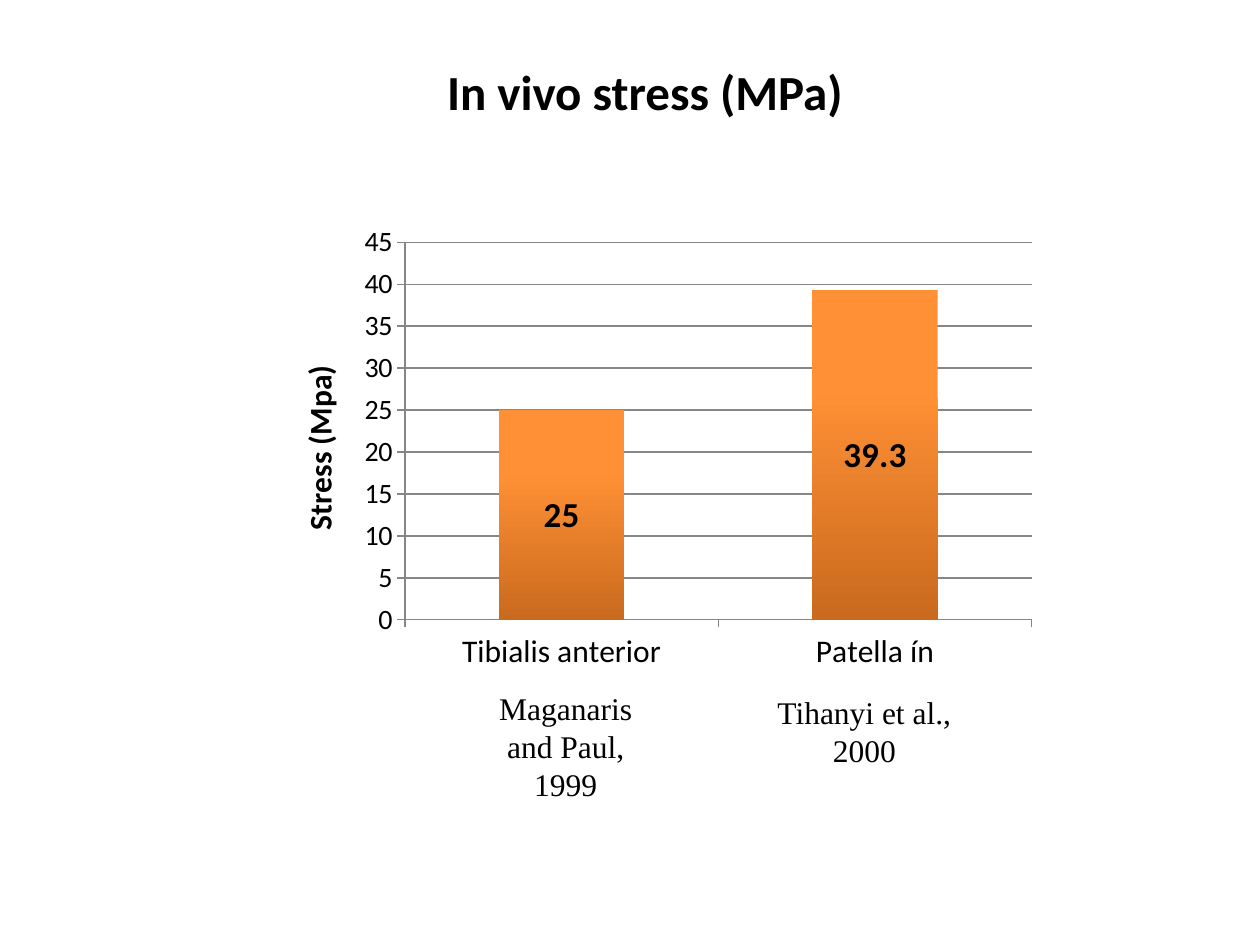
from lxml.etree import SubElement
from pptx import Presentation
from pptx.chart.data import CategoryChartData
from pptx.dml.color import RGBColor
from pptx.enum.chart import XL_CHART_TYPE as ChartType, XL_LABEL_POSITION as LabelPosition
from pptx.enum.chart import XL_TICK_MARK as TickMark
from pptx.enum.text import MSO_ANCHOR as Anchor, PP_ALIGN as Align
from pptx.oxml.ns import qn
from pptx.util import Cm, Pt

COLORS = {"text": "000000", "axis": "868686", "bar_top": "FF9035", "bar_bottom": "C96A1E"}
HEADING_FONT, CITATION_FONT = "Calibri", "Times New Roman"


def color(name):
    return RGBColor.from_string(COLORS[name])


def set_font(font, size, name=HEADING_FONT, bold=False):
    font.size, font.name, font.bold = Pt(size), name, bold
    font.color.rgb = color("text")


def write_centered(shape, text, size, name, bold=False):
    frame = shape.text_frame
    frame.word_wrap = True
    frame.vertical_anchor = Anchor.TOP
    paragraph = frame.paragraphs[0]
    paragraph.alignment = Align.CENTER
    run = paragraph.add_run()
    run.text = text
    set_font(run.font, size, name, bold)


def place_title(slide, box):
    title = slide.shapes.title
    title.left, title.top, title.width, title.height = box
    write_centered(title, "In vivo stress (MPa)", 28, HEADING_FONT, True)


def set_plot_area(chart, **fractions):
    plot_area = chart.plots[0]._element.getparent()
    layout = plot_area.find(qn("c:layout"))
    if layout is None:
        layout = SubElement(plot_area, qn("c:layout"))
        plot_area.insert(0, layout)
    manual = SubElement(layout, qn("c:manualLayout"))
    settings = {"layoutTarget": "inner", "xMode": "edge", "yMode": "edge", **fractions}
    for tag, value in settings.items():
        SubElement(manual, qn(f"c:{tag}")).set("val", str(value))


def style_axis(axis, size):
    axis.major_tick_mark = TickMark.OUTSIDE
    axis.minor_tick_mark = TickMark.NONE
    axis.format.line.color.rgb = color("axis")
    set_font(axis.tick_labels.font, size)


def add_stress_chart(slide, box):
    data = CategoryChartData()
    data.categories = ["Tibialis anterior", "Patella ín"]
    data.add_series("Series 1", [25, 39.3])
    chart = slide.shapes.add_chart(ChartType.COLUMN_CLUSTERED, *box, data).chart
    set_font(chart.font, 10)
    chart.has_legend = False
    chart.has_title = False
    set_plot_area(chart, x=0.17, y=0.06, w=0.81, h=0.81)

    # Axes
    style_axis(chart.category_axis, 18)
    value_axis = chart.value_axis
    style_axis(value_axis, 16)
    value_axis.minimum_scale, value_axis.maximum_scale, value_axis.major_unit = 0, 45, 5
    value_axis.has_major_gridlines = True
    value_axis.major_gridlines.format.line.color.rgb = color("axis")
    run = value_axis.axis_title.text_frame.paragraphs[0].add_run()
    run.text = "Stress (Mpa)"
    set_font(run.font, 18, bold=True)

    # Bars and their labels
    plot = chart.plots[0]
    plot.gap_width = 150
    plot.vary_by_categories = False
    fill = plot.series[0].format.fill
    fill.gradient()
    fill.gradient_angle = 270
    for stop, name, position in zip(fill.gradient_stops, ("bar_top", "bar_bottom"), (0.3, 1)):
        stop.color.rgb = color(name)
        stop.position = position
    plot.has_data_labels = True
    labels = plot.data_labels
    labels.show_value = True
    labels.position = LabelPosition.CENTER
    set_font(labels.font, 20, bold=True)


def add_citation(slide, box, text):
    write_centered(slide.shapes.add_textbox(*box), text, 18, CITATION_FONT)


def main():
    presentation = Presentation()
    presentation.slide_width, presentation.slide_height = Cm(25.4), Cm(19.05)
    slide = presentation.slides.add_slide(presentation.slide_layouts[5])
    add_stress_chart(slide, (Cm(5.51), Cm(4.32), Cm(15.6), Cm(9.4)))
    place_title(slide, (Cm(1.9), Cm(1.12), Cm(22.2), Cm(1.45)))
    add_citation(slide, (Cm(9.35), Cm(13.77), Cm(4.11), Cm(2.57)), "Maganaris and Paul, 1999")
    add_citation(slide, (Cm(15.42), Cm(13.84), Cm(4.01), Cm(1.8)), "Tihanyi et al., 2000")
    presentation.save("out.pptx")


if __name__ == "__main__":
    main()
